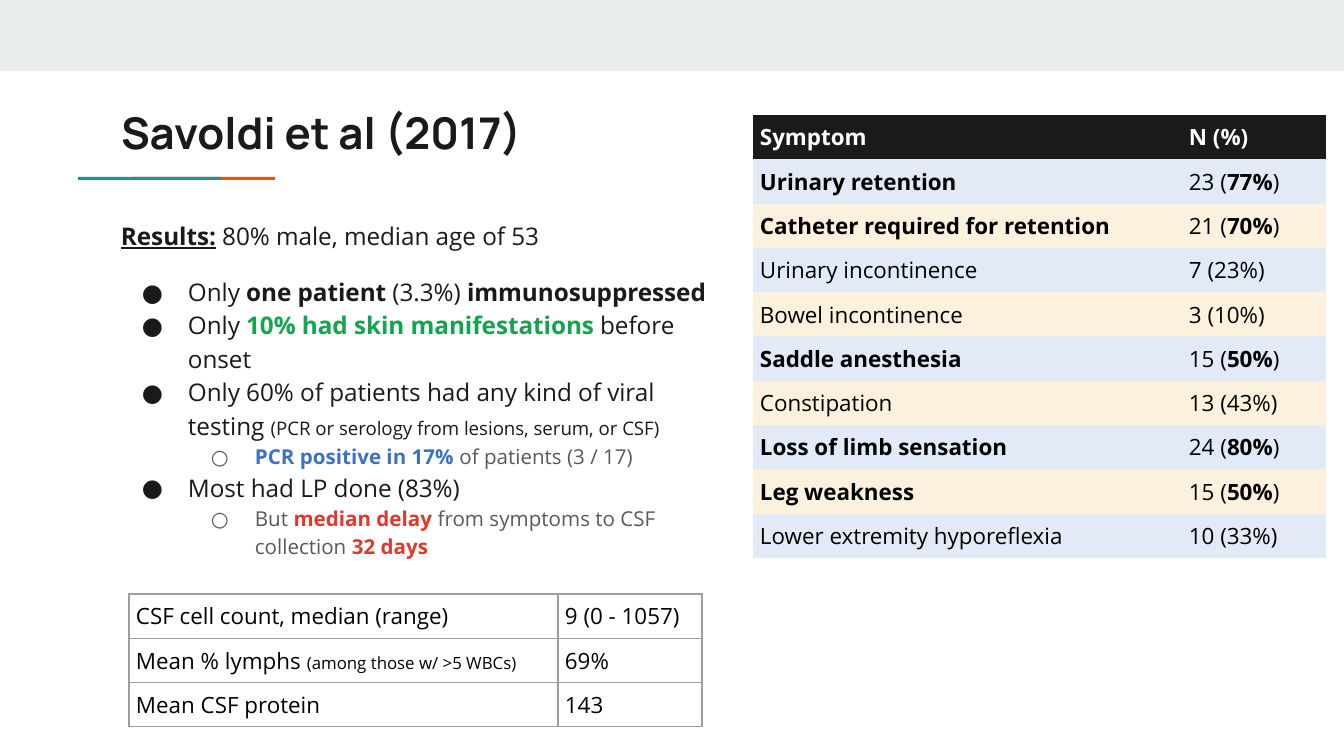
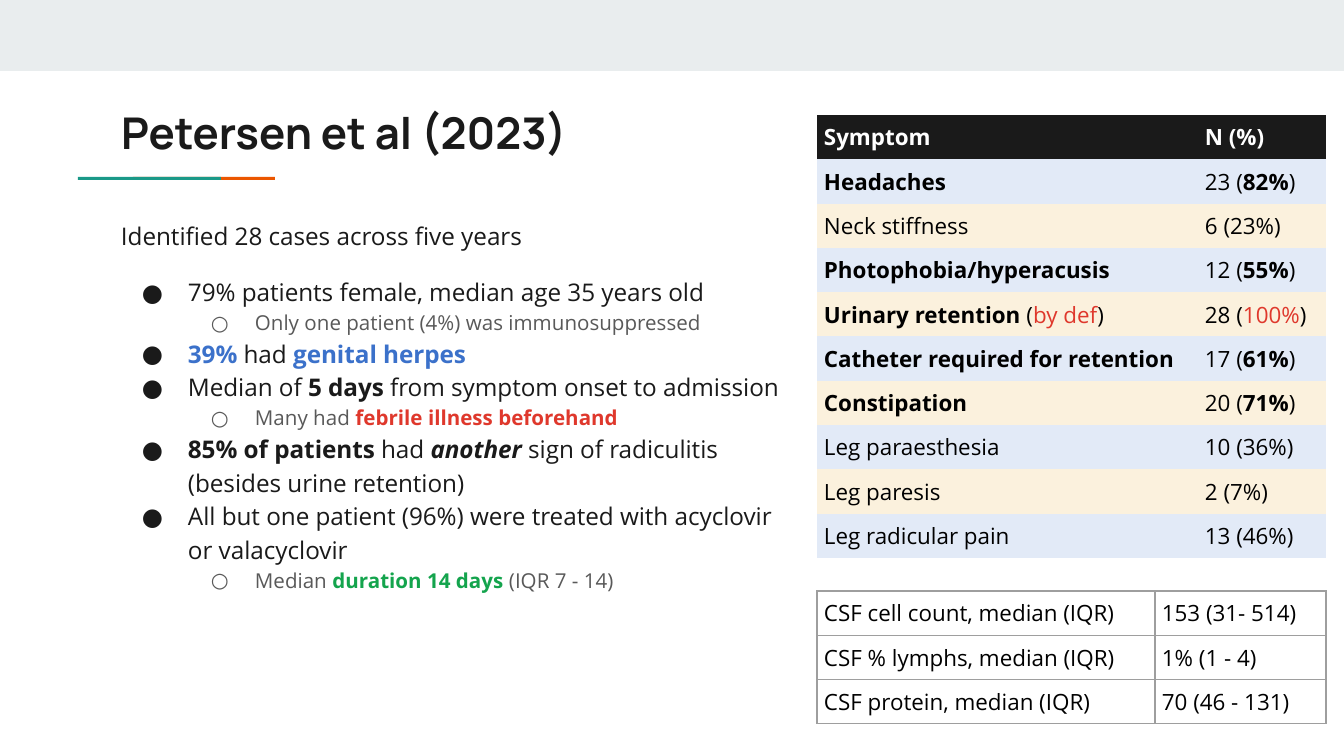
import dataclasses

import lxml.etree
import pptx
import pptx.dml.color
import pptx.enum.shapes
import pptx.enum.text
import pptx.oxml.ns
import pptx.util

EMU_PER_PX = 914400 / 134.4
SLIDE_WIDTH, SLIDE_HEIGHT = 1344, 756


def px(length):
    return pptx.util.Emu(round(length * EMU_PER_PX))


def rgb(value):
    return pptx.dml.color.RGBColor.from_string(value)


def set_attributes(target, values):
    for name, value in values.items():
        setattr(target, name, value)


def add_child(parent, tag, **attributes):
    return lxml.etree.SubElement(parent, pptx.oxml.ns.qn(tag), attributes)


@dataclasses.dataclass(frozen=True)
class Theme:
    band: str = "E9EDEE"
    teal: str = "1A9988"
    orange: str = "EB5600"
    ink: str = "1A1A1A"
    muted: str = "595959"
    black: str = "000000"
    white: str = "FFFFFF"
    border: str = "9E9E9E"
    stripes: tuple = ("E2EAF7", "FBF1DD")
    accents: tuple = (("red", "DF382C"), ("green", "14A44D"), ("blue", "3B71CA"))
    title_font: str = "Manrope"
    text_font: str = "Open Sans"
    title_size: float = 23.4
    body_size: int = 13
    sub_size: int = 11
    table_size: int = 12
    note_size: int = 10
    small_size: int = 9


class Deck:
    def __init__(self, theme):
        self.theme = theme
        self.presentation = pptx.Presentation()
        set_attributes(self.presentation, {
            "slide_width": px(SLIDE_WIDTH), "slide_height": px(SLIDE_HEIGHT)})
        self.slide = None
        self.sizes = {"note": theme.note_size, "small": theme.small_size}
        self.accents = dict(theme.accents)

    def add_slide(self, title):
        theme = self.theme
        self.slide = self.presentation.slides.add_slide(
            self.presentation.slide_layouts[6])
        self.add_bar(0, 0, SLIDE_WIDTH, 71, theme.band)
        self.add_bar(133, 177, 142, 3, theme.orange)
        self.add_bar(78, 177, 143, 3, theme.teal)
        frame = self.add_frame(108, 93, 618, 79)
        self.add_runs(frame.paragraphs[0], [(title, "bold")], theme.title_size,
                      theme.ink, theme.title_font)

    def add_bar(self, left, top, width, height, color):
        shape = self.slide.shapes.add_shape(
            pptx.enum.shapes.MSO_SHAPE.RECTANGLE,
            px(left), px(top), px(width), px(height))
        shape.shadow.inherit = False
        shape.fill.solid()
        shape.fill.fore_color.rgb = rgb(color)
        shape.line.fill.background()

    def add_frame(self, left, top, width, height):
        frame = self.slide.shapes.add_textbox(
            px(left), px(top), px(width), px(height)).text_frame
        inset = px(13)
        set_attributes(frame, {
            "word_wrap": True, "margin_left": inset, "margin_right": inset,
            "margin_top": inset, "margin_bottom": inset})
        return frame

    def add_runs(self, paragraph, runs, size, color, font=None):
        if isinstance(runs, str):
            runs = [runs]
        for item in runs:
            text, style = (item, "") if isinstance(item, str) else item
            words = style.split()
            run = paragraph.add_run()
            run.text = text
            run_size, run_color = size, color
            for word in words:
                run_size = self.sizes.get(word, run_size)
                run_color = self.accents.get(word, run_color)
            set_attributes(run.font, {
                "name": font or self.theme.text_font,
                "size": pptx.util.Pt(run_size),
                "bold": "bold" in words,
                "italic": "italic" in words,
                "underline": "underline" in words})
            run.font.color.rgb = rgb(run_color)

    def add_bullet(self, paragraph, symbol, color, margin, hanging):
        properties = paragraph._p.get_or_add_pPr()
        properties.set("marL", str(px(margin)))
        properties.set("indent", str(-px(hanging)))
        bullet_color = add_child(properties, "a:buClr")
        add_child(bullet_color, "a:srgbClr", val=color)
        add_child(properties, "a:buFont", typeface=self.theme.text_font)
        add_child(properties, "a:buChar", char=symbol)

    def add_body(self, width, height, lead, bullets):
        theme = self.theme
        frame = self.add_frame(108, 204, width, height)
        levels = (("●", theme.ink, theme.body_size, 67, 46),
                  ("○", theme.muted, theme.sub_size, 134, 44))
        paragraph = frame.paragraphs[0]
        paragraph.line_spacing = 1.15
        self.add_runs(paragraph, lead, theme.body_size, theme.ink)
        for index, (level, runs) in enumerate(bullets):
            symbol, color, size, margin, hanging = levels[level]
            paragraph = frame.add_paragraph()
            self.add_bullet(paragraph, symbol, color, margin, hanging)
            set_attributes(paragraph, {
                "level": level, "line_spacing": 1.15,
                "space_before": pptx.util.Pt(0 if index else 12)})
            self.add_runs(paragraph, runs, size, color)

    def add_borders(self, cell, color):
        properties = cell._tc.get_or_add_tcPr()
        for side in ("a:lnL", "a:lnR", "a:lnT", "a:lnB"):
            line = add_child(properties, side, w=str(pptx.util.Pt(0.75)))
            if color:
                fill = add_child(line, "a:solidFill")
                add_child(fill, "a:srgbClr", val=color)
            else:
                add_child(line, "a:noFill")

    def add_cell(self, cell, runs, color, fill, border):
        set_attributes(cell, {
            "margin_left": px(7), "margin_right": px(7),
            "margin_top": px(6), "margin_bottom": px(6),
            "vertical_anchor": pptx.enum.text.MSO_ANCHOR.MIDDLE})
        self.add_borders(cell, border)
        if fill:
            cell.fill.solid()
            cell.fill.fore_color.rgb = rgb(fill)
        else:
            cell.fill.background()
        self.add_runs(cell.text_frame.paragraphs[0], runs,
                      self.theme.table_size, color)

    def add_table(self, left, top, widths, height, rows, fills=None, border=None):
        theme = self.theme
        table = self.slide.shapes.add_table(
            len(rows), len(widths), px(left), px(top),
            px(sum(widths)), px(height)).table
        set_attributes(table, {"first_row": False, "horz_banding": False})
        for column, width in zip(table.columns, widths):
            column.width = px(width)
        for row_index, values in enumerate(rows):
            table.rows[row_index].height = px(height / len(rows))
            fill = fills[row_index] if fills else None
            color = theme.white if fill == theme.ink else theme.black
            for column_index, runs in enumerate(values):
                self.add_cell(table.cell(row_index, column_index), runs,
                              color, fill, border)

    def add_symptom_table(self, left, widths, symptoms):
        rows = [([("Symptom", "bold")], [("N (%)", "bold")])]
        fills = [self.theme.ink]
        for index, (label, count, percent, style) in enumerate(symptoms):
            name = [(label, style)] if isinstance(label, str) else label
            value = [f"{count} (", (f"{percent}%", style), ")"]
            rows.append((name, value))
            fills.append(self.theme.stripes[index % 2])
        self.add_table(left, 115, widths, 443, rows, fills=fills)

    def add_fluid_table(self, left, top, widths, rows):
        self.add_table(left, top, widths, 133, rows, border=self.theme.border)


def build_savoldi(deck):
    deck.add_slide("Savoldi et al (2017)")
    deck.add_body(
        634, 382,
        [("Results:", "bold underline"), " 80% male, median age of 53"],
        [(0, ["Only ", ("one patient", "bold"), " (3.3%) ",
              ("immunosuppressed", "bold")]),
         (0, ["Only ", ("10% had skin manifestations", "bold green"),
              " before onset"]),
         (0, ["Only 60% of patients had any kind of viral testing ",
              ("(PCR or serology from lesions, serum, or CSF)", "note")]),
         (1, [("PCR positive in 17%", "bold blue"), " of patients (3 / 17)"]),
         (0, "Most had LP done (83%)"),
         (1, ["But ", ("median delay", "bold red"),
              " from symptoms to CSF collection ", ("32 days", "bold red")])])
    deck.add_fluid_table(129, 594, (429, 144), [
        ("CSF cell count, median (range)", "9 (0 - 1057)"),
        (["Mean % lymphs ", ("(among those w/ >5 WBCs)", "small")], "69%"),
        ("Mean CSF protein", "143")])
    deck.add_symptom_table(753, (429, 144), [
        ("Urinary retention", 23, 77, "bold"),
        ("Catheter required for retention", 21, 70, "bold"),
        ("Urinary incontinence", 7, 23, ""),
        ("Bowel incontinence", 3, 10, ""),
        ("Saddle anesthesia", 15, 50, "bold"),
        ("Constipation", 13, 43, ""),
        ("Loss of limb sensation", 24, 80, "bold"),
        ("Leg weakness", 15, 50, "bold"),
        ("Lower extremity hyporeflexia", 10, 33, "")])


def build_petersen(deck):
    deck.add_slide("Petersen et al (2023)")
    deck.add_body(
        696, 462,
        "Identified 28 cases across five years",
        [(0, "79% patients female, median age 35 years old"),
         (1, "Only one patient (4%) was immunosuppressed"),
         (0, [("39%", "bold blue"), " had ", ("genital herpes", "bold blue")]),
         (0, ["Median of ", ("5 days", "bold"),
              " from symptom onset to admission"]),
         (1, ["Many had ", ("febrile illness beforehand", "bold red")]),
         (0, [("85% of patients ", "bold"), "had ", ("another ", "bold italic"),
              "sign of radiculitis (besides urine retention)"]),
         (0, "All but one patient (96%) were treated with acyclovir or valacyclovir"),
         (1, ["Median ", ("duration 14 days", "bold green"), " (IQR 7 - 14)"])])
    deck.add_symptom_table(817, (381, 128), [
        ("Headaches", 23, 82, "bold"),
        ("Neck stiffness", 6, 23, ""),
        ("Photophobia/hyperacusis", 12, 55, "bold"),
        ([("Urinary retention", "bold"), " (", ("by def", "red"), ")"],
         28, 100, "red"),
        ("Catheter required for retention", 17, 61, "bold"),
        ("Constipation", 20, 71, "bold"),
        ("Leg paraesthesia", 10, 36, ""),
        ("Leg paresis", 2, 7, ""),
        ("Leg radicular pain", 13, 46, "")])
    deck.add_fluid_table(817, 591, (338, 171), [
        ("CSF cell count, median (IQR)", "153 (31- 514)"),
        ("CSF % lymphs, median (IQR)", "1% (1 - 4)"),
        ("CSF protein, median (IQR)", "70 (46 - 131)")])


def main():
    deck = Deck(Theme())
    build_savoldi(deck)
    build_petersen(deck)
    deck.presentation.save("out.pptx")


if __name__ == "__main__":
    main()
